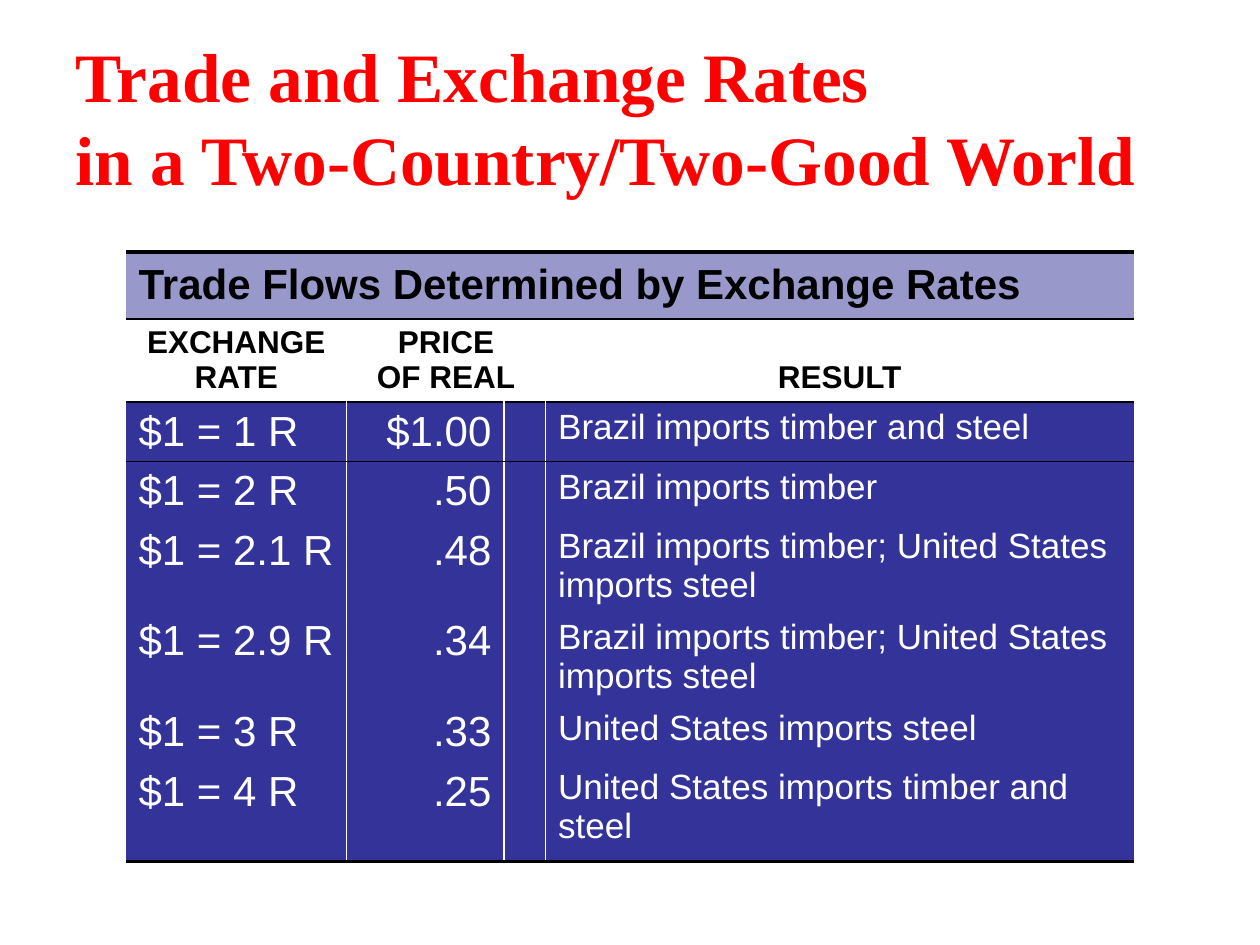
import pptx
import pptx.dml.color
import pptx.enum.text
import pptx.oxml
import pptx.oxml.ns
import pptx.util
from lxml import etree

Inches = pptx.util.Inches
Pt = pptx.util.Pt
RGBColor = pptx.dml.color.RGBColor
Align = pptx.enum.text.PP_ALIGN
Anchor = pptx.enum.text.MSO_ANCHOR
qn = pptx.oxml.ns.qn

RED = RGBColor(0xFF, 0x00, 0x00)
BLACK = RGBColor(0x00, 0x00, 0x00)
WHITE = RGBColor(0xFF, 0xFF, 0xFF)
NAVY = RGBColor(0x33, 0x33, 0x99)

NO_GRID_STYLE = "{2D5ABB26-0587-4C30-8999-92F81FD0307C}"
COLUMN_WIDTHS = (1.75, 1.25, 0.33, 4.67)
ROW_HEIGHTS = (0.53, 0.66, 0.47, 0.47, 0.72, 0.72, 0.47, 0.79)
HEADINGS = (
    (0, "EXCHANGE RATE", Anchor.MIDDLE),
    (1, "PRICE\vOF REAL", Anchor.MIDDLE),
    (3, "RESULT", Anchor.BOTTOM),
)
TRADE_FLOWS = (
    ("$1 = 1 R", "$1.00", "Brazil imports timber and steel"),
    ("$1 = 2 R", ".50", "Brazil imports timber"),
    ("$1 = 2.1 R", ".48", "Brazil imports timber; United States imports steel"),
    ("$1 = 2.9 R", ".34", "Brazil imports timber; United States imports steel"),
    ("$1 = 3 R", ".33", "United States imports steel"),
    ("$1 = 4 R", ".25", "United States imports timber and steel"),
)


def format_text(frame, text, color, align=Align.LEFT, **font_values):
    """Write text in a frame and format each run."""
    frame.text = text
    for paragraph in frame.paragraphs:
        paragraph.alignment = align
        for run in paragraph.runs:
            run.font.color.rgb = color
            for name, value in font_values.items():
                setattr(run.font, name, value)


def set_borders(cell, borders):
    """Draw the cell's borders, given as side: (colour, points)."""
    properties = cell._tc.get_or_add_tcPr()
    for side in "LRTB":
        if side in borders:
            color, points = borders[side]
            line = etree.SubElement(properties, qn(f"a:ln{side}"), w=str(Pt(points)))
            fill = etree.SubElement(line, qn("a:solidFill"))
            etree.SubElement(fill, qn("a:srgbClr"), val=str(color))


def fill_cell(cell, color, opacity=100):
    """Fill a cell with a colour at an opacity in percent."""
    cell.fill.solid()
    cell.fill.fore_color.rgb = color
    if opacity < 100:
        color_element = cell._tc.tcPr.find(".//" + qn("a:solidFill") + "[last()]/" + qn("a:srgbClr"))
        for solid in cell._tc.tcPr.findall(qn("a:solidFill")):
            color_element = solid.find(qn("a:srgbClr"))
        etree.SubElement(color_element, qn("a:alpha"), val=str(opacity * 1000))


def add_title(slide, left, top, width, height):
    """Place and format the slide title."""
    title = slide.shapes.title
    box = {"left": left, "top": top, "width": width, "height": height}
    for name, value in box.items():
        setattr(title, name, value)
    title.text_frame.vertical_anchor = Anchor.MIDDLE
    format_text(title.text_frame,
                "Trade and Exchange Rates\vin a Two-Country/Two-Good World",
                RED, name="Times New Roman", size=Pt(39.6), bold=True)


def add_caption_and_headings(table):
    """Fill the caption row and the row of column headings."""
    for column in range(len(COLUMN_WIDTHS)):
        for row, top_width, color, opacity in ((0, 2.25, NAVY, 50), (1, 1, WHITE, 48)):
            cell = table.cell(row, column)
            set_borders(cell, {"T": (BLACK, top_width), "B": (BLACK, 1)})
            fill_cell(cell, color, opacity)
    caption = table.cell(0, 0)
    caption.merge(table.cell(0, 3))
    caption.vertical_anchor = Anchor.MIDDLE
    format_text(caption.text_frame, "Trade Flows Determined by Exchange Rates",
                BLACK, name="Arial", size=Pt(24), bold=True)
    table.cell(1, 1).merge(table.cell(1, 2))
    for column, heading, anchor in HEADINGS:
        cell = table.cell(1, column)
        cell.vertical_anchor = anchor
        format_text(cell.text_frame, heading, BLACK, Align.CENTER,
                    name="Arial", size=Pt(18), bold=True)


def add_flow_rows(table):
    """Fill the rows of exchange rates, prices and results."""
    divider = (WHITE, 1)
    dividers = ({"R": divider}, {"L": divider}, {"R": divider}, {"L": divider})
    last = len(TRADE_FLOWS) - 1
    for index, (rate, price, result) in enumerate(TRADE_FLOWS):
        entries = ((rate, Align.LEFT, 24), (price, Align.RIGHT, 24),
                   ("", Align.LEFT, 20), (result, Align.LEFT, 20))
        for column, (text, align, size) in enumerate(entries):
            cell = table.cell(index + 2, column)
            borders = dict(dividers[column])
            if index == 0:
                borders["T"] = (BLACK, 1)
            if index == last:
                borders["B"] = (BLACK, 2.25)
            set_borders(cell, borders)
            fill_cell(cell, NAVY)
            format_text(cell.text_frame, text, WHITE, align,
                        name="Arial", size=Pt(size), bold=False)


def add_trade_table(slide, left, top, width, height):
    """Place the table of trade flows."""
    table = slide.shapes.add_table(len(ROW_HEIGHTS), len(COLUMN_WIDTHS),
                                   left, top, width, height).table
    table._tbl.tblPr.find(qn("a:tableStyleId")).text = NO_GRID_STYLE
    for column, column_width in zip(table.columns, COLUMN_WIDTHS):
        column.width = Inches(column_width)
    for row, row_height in zip(table.rows, ROW_HEIGHTS):
        row.height = Inches(row_height)
    add_caption_and_headings(table)
    add_flow_rows(table)


def main():
    """Build and save the slide."""
    presentation = pptx.Presentation()
    presentation.slide_width = Inches(10)
    presentation.slide_height = Inches(7.5)
    slide = presentation.slides.add_slide(presentation.slide_layouts[5])
    add_title(slide, Inches(0.5), Inches(0.3), Inches(9), Inches(1.25))
    add_trade_table(slide, Inches(1), Inches(2), Inches(8), Inches(sum(ROW_HEIGHTS)))
    presentation.save("out.pptx")


if __name__ == "__main__":
    main()
